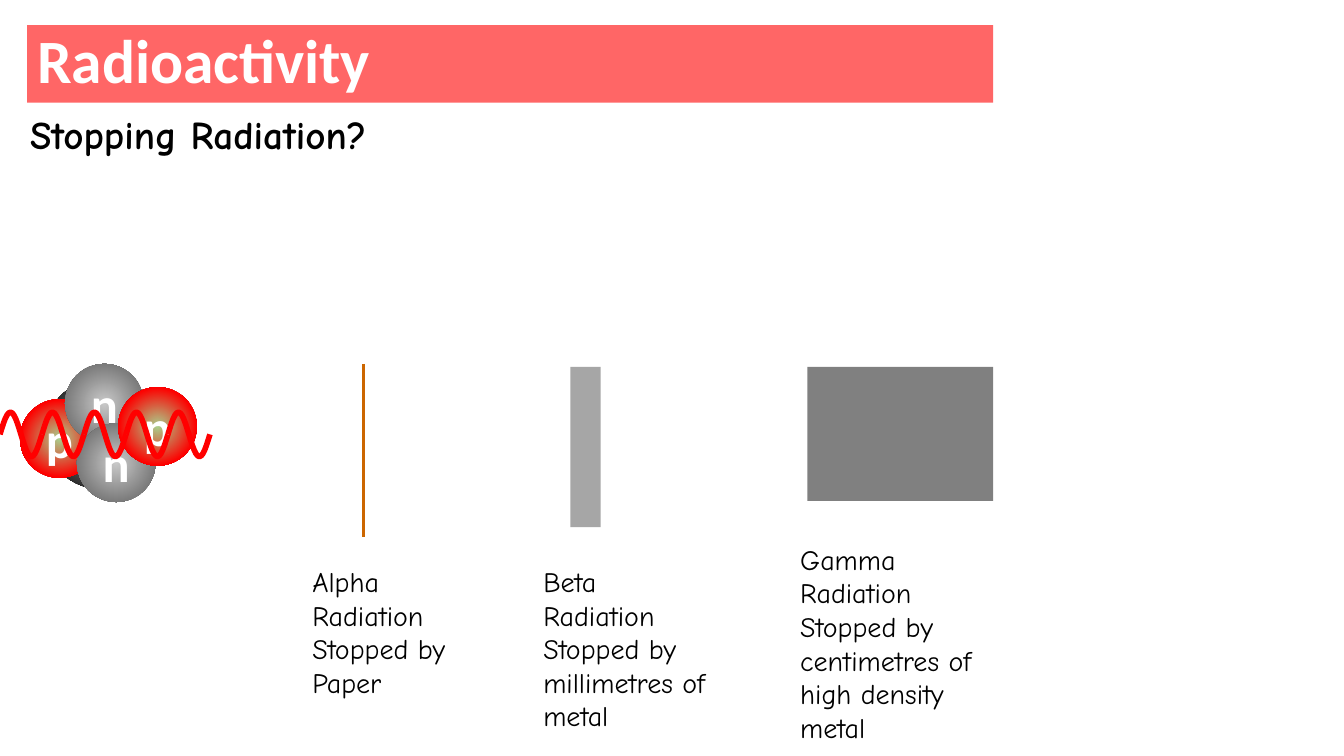
from dataclasses import dataclass
from math import pi, sin

from lxml import etree
from pptx import Presentation
from pptx.dml.color import RGBColor
from pptx.enum import shapes, text
from pptx.oxml import parse_xml
from pptx.oxml.ns import nsdecls, qn
from pptx.util import Pt


@dataclass(frozen=True)
class Theme:
    head: str = "Calibri"
    body: str = "Comic Neue"
    title_size: float = 44
    subtitle_size: float = 28
    particle_size: float = 36
    body_size: float = 20
    white: str = "FFFFFF"
    black: str = "000000"
    banner: str = "FF6666"
    wave: str = "FF0000"
    paper: str = "CC6600"
    thin_metal: str = "A6A6A6"
    dense_metal: str = "808080"
    # radial gradients, centre to rim
    electron: tuple = ((0, "BFBFBF"), (44, "595959"), (100, "000000"))
    proton: tuple = ((0, "A9D18E"), (70, "FF0000"), (100, "C00000"))
    neutron: tuple = ((0, "C9C9C9"), (70, "7C7C7C"), (100, "525252"))


def rgb(color):
    return RGBColor.from_string(color)


class SlideBuilder:
    def __init__(self, slide, theme):
        self.s, self.t = slide, theme

    def set_text(self, sp, lines, font, size, color, bold=False, align=None,
                 anchor=text.MSO_ANCHOR.TOP, spacing=None):
        tf = sp.text_frame
        tf.word_wrap = True
        tf.vertical_anchor = anchor
        tf.text = "\n".join(lines)
        for p in tf.paragraphs:
            p.alignment = align or text.PP_ALIGN.LEFT
            p.line_spacing = spacing
            p.font.name, p.font.size, p.font.bold = font, Pt(size), bold
            p.font.color.rgb = rgb(color)

    def rect(self, x, y, w, h, fill, border=None):
        sp = self.s.shapes.add_shape(shapes.MSO_SHAPE.RECTANGLE,
                                     Pt(x), Pt(y), Pt(w), Pt(h))
        sp.shadow.inherit = False
        sp.fill.solid()
        sp.fill.fore_color.rgb = rgb(fill)
        if border:
            sp.line.color.rgb = rgb(fill)
            sp.line.width = Pt(border)
        else:
            sp.line.fill.background()
        return sp

    def particle(self, parent, letter, x, y, size, stops):
        sp = parent.add_shape(shapes.MSO_SHAPE.OVAL,
                              Pt(x), Pt(y), Pt(size), Pt(size))
        sp.shadow.inherit = False
        sp.line.fill.background()
        gs = "".join(f'<a:gs pos="{pos * 1000}"><a:srgbClr val="{color}"/></a:gs>'
                     for pos, color in stops)
        grad = parse_xml(
            f'<a:gradFill {nsdecls("a")}><a:gsLst>{gs}</a:gsLst><a:path path="circle">'
            '<a:fillToRect l="50000" t="50000" r="50000" b="50000"/></a:path></a:gradFill>')
        sp._element.spPr.find(qn("a:prstGeom")).addnext(grad)
        self.set_text(sp, [letter], self.t.head, self.t.particle_size, self.t.white,
                      True, text.PP_ALIGN.CENTER, text.MSO_ANCHOR.MIDDLE)

    def wave(self, parent, x, mid, period, height, steps=24):
        points = [(Pt(x + period * i / steps),
                   Pt(mid - height / 2 * sin(2 * pi * i / steps)))
                  for i in range(steps + 1)]
        fb = parent.build_freeform(*points[0])
        fb.add_line_segments(points[1:], close=False)
        sp = fb.convert_to_shape()
        sp.shadow.inherit = False
        sp.fill.background()
        sp.line.color.rgb = rgb(self.t.wave)
        sp.line.width = Pt(4)

    def line(self, x1, y1, x2, y2, color, width):
        cx = self.s.shapes.add_connector(shapes.MSO_CONNECTOR.STRAIGHT,
                                         Pt(x1), Pt(y1), Pt(x2), Pt(y2))
        cx.line.color.rgb = rgb(color)
        cx.line.width = Pt(width)
        etree.SubElement(cx._element.spPr, qn("a:effectLst"))

    def caption(self, x, y, w, h, lines):
        tb = self.s.shapes.add_textbox(Pt(x), Pt(y), Pt(w), Pt(h))
        self.set_text(tb, lines, self.t.body, self.t.body_size, self.t.black)


def main():
    prs = Presentation()
    prs.slide_width, prs.slide_height = Pt(960), Pt(540)
    s = prs.slides.add_slide(prs.slide_layouts[6])
    t = Theme()
    b = SlideBuilder(s, t)

    # Title banner and question
    title = b.rect(19.4, 18, 690, 55.4, t.banner)
    b.set_text(title, ["Radioactivity"], t.head, t.title_size, t.white, True,
               anchor=text.MSO_ANCHOR.MIDDLE, spacing=0.9)
    question = b.rect(14.4, 75.6, 603.4, 41, t.white, border=4.5)
    b.set_text(question, ["Stopping Radiation?"], t.body, t.subtitle_size, t.black, True)

    # Beta particle, behind the alpha particle
    b.particle(s.shapes, "e", 32.4, 270.7, 78.5, t.electron)

    # Alpha particle
    alpha = s.shapes.add_group_shape().shapes
    for letter, x, y, stops in (("p", 14.3, 285.1, t.proton),
                                ("n", 46.4, 259.9, t.neutron),
                                ("n", 54.9, 302.4, t.neutron),
                                ("p", 84.4, 276.5, t.proton)):
        b.particle(alpha, letter, x, y, 56.2, stops)

    # Gamma wave, one curve per period
    gamma = s.shapes.add_group_shape().shapes
    period = 30
    for i in range(5):
        b.wave(gamma, i * period, 310.3, period, 31.7)

    # Barriers
    b.line(259.4, 260, 259.4, 383.8, t.paper, 2)
    b.rect(407.5, 262, 21.6, 114.5, t.thin_metal)
    b.rect(576.7, 262, 132.7, 95.8, t.dense_metal)

    # Captions
    for x, y, w, h, ray, barrier in (
            (216, 399.6, 134, 104.4, "Alpha", "Paper"),
            (381, 399.6, 134, 128.2, "Beta", "millimetres of metal"),
            (564.5, 383.8, 157, 152.6, "Gamma", "centimetres of high density metal")):
        b.caption(x, y, w, h, [f"{ray} Radiation", f"Stopped by {barrier}"])

    prs.save("out.pptx")


if __name__ == "__main__":
    main()
